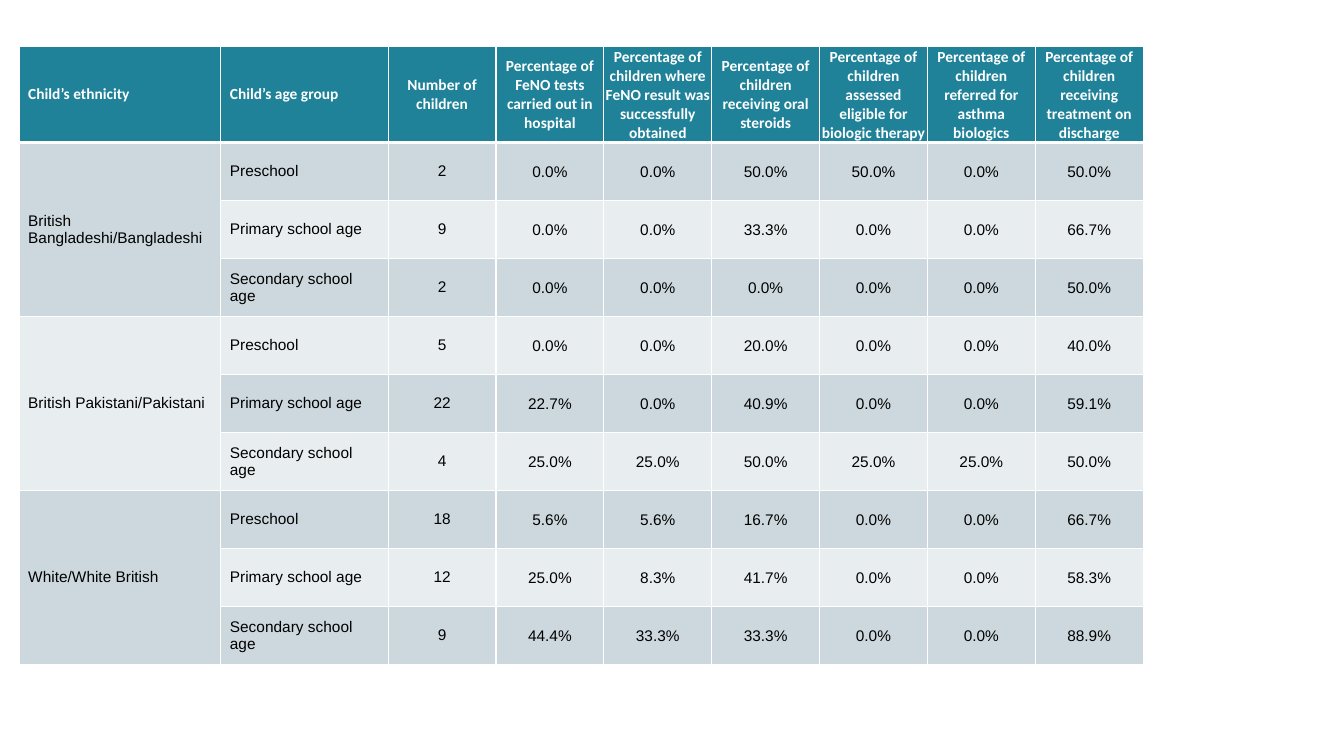
import pptx
import pptx.util
import pptx.dml.color
import pptx.enum.text
import pptx.oxml.ns
from lxml import etree

SLIDE_WIDTH, SLIDE_HEIGHT = 13.33, 7.5
COLUMN_WIDTHS = [2, 1.66] + [1.07] * 7
HEADER_HEIGHT = 0.94
HEADER_FILL, DARK_BAND, LIGHT_BAND = "1F8299", "CDD8DE", "E8EDEF"
WHITE, BLACK = "FFFFFF", "000000"

HEADINGS = [
    "Child’s ethnicity",
    "Child’s age group",
    "Number of children",
    "Percentage of FeNO tests carried out in hospital",
    "Percentage of children where FeNO result was successfully obtained",
    "Percentage of children receiving oral steroids",
    "Percentage of children assessed eligible for biologic therapy",
    "Percentage of children referred for asthma biologics",
    "Percentage of children receiving treatment on discharge",
]
AGE_GROUPS = ["Preschool", "Primary school age", "Secondary school age"]
OUTCOMES = {
    "British Bangladeshi/Bangladeshi": [
        (2, 0, 0, 50, 50, 0, 50),
        (9, 0, 0, 33.3, 0, 0, 66.7),
        (2, 0, 0, 0, 0, 0, 50),
    ],
    "British Pakistani/Pakistani": [
        (5, 0, 0, 20, 0, 0, 40),
        (22, 22.7, 0, 40.9, 0, 0, 59.1),
        (4, 25, 25, 50, 25, 25, 50),
    ],
    "White/White British": [
        (18, 5.6, 5.6, 16.7, 0, 0, 66.7),
        (12, 25, 8.3, 41.7, 0, 0, 58.3),
        (9, 44.4, 33.3, 33.3, 0, 0, 88.9),
    ],
}


def color(hex_value):
    return pptx.dml.color.RGBColor.from_string(hex_value)


def add_border(cell, side, points):
    properties = cell._tc.get_or_add_tcPr()
    line = etree.SubElement(properties, pptx.oxml.ns.qn(f"a:ln{side}"), w=str(pptx.util.Pt(points)))
    fill = etree.SubElement(line, pptx.oxml.ns.qn("a:solidFill"))
    etree.SubElement(fill, pptx.oxml.ns.qn("a:srgbClr"), val=WHITE)


def format_cell(cell, row, column):
    heading = row == 0
    rule_widths = {"L": 1, "R": 1, "T": 3 if row == 1 else 1, "B": 3 if heading else 1}
    for side, points in rule_widths.items():
        add_border(cell, side, points)
    cell.fill.solid()
    band = DARK_BAND if row % 2 else LIGHT_BAND
    cell.fill.fore_color.rgb = color(HEADER_FILL if heading else band)
    cell.vertical_anchor = pptx.enum.text.MSO_ANCHOR.MIDDLE
    percentage = column >= 3
    cell.margin_left = cell.margin_right = pptx.util.Inches(0.01 if percentage else 0.09)
    cell.margin_top = pptx.util.Inches(0.01 if percentage else 0.05)
    cell.margin_bottom = pptx.util.Inches(0 if percentage else 0.05)


def write_cell(cell, text, row, column):
    paragraph = cell.text_frame.paragraphs[0]
    if column >= 2:
        paragraph.alignment = pptx.enum.text.PP_ALIGN.CENTER
    run = paragraph.add_run()
    run.text = text
    run.font.size = pptx.util.Pt(11)
    run.font.name = "Arial" if row else "Calibri"
    run.font.bold = row == 0
    run.font.color.rgb = color(BLACK if row else WHITE)


def outcome_rows():
    rows = [HEADINGS]
    for ethnicity, groups in OUTCOMES.items():
        for index, (age_group, values) in enumerate(zip(AGE_GROUPS, groups)):
            children, *percentages = values
            rows.append([
                "" if index else ethnicity,
                age_group,
                str(children),
                *(f"{value:.1f}%" for value in percentages),
            ])
    return rows


def add_outcomes_table(slide, left, top, width, height):
    rows = outcome_rows()
    box = [pptx.util.Inches(length) for length in (left, top, width, height)]
    outcomes = slide.shapes.add_table(len(rows), len(HEADINGS), *box).table
    for column, share in zip(outcomes.columns, COLUMN_WIDTHS):
        column.width = pptx.util.Inches(width * share / sum(COLUMN_WIDTHS))
    body_height = (height - HEADER_HEIGHT) / (len(rows) - 1)
    for index, row in enumerate(outcomes.rows):
        row.height = pptx.util.Inches(body_height if index else HEADER_HEIGHT)
    for row, texts in enumerate(rows):
        for column, text in enumerate(texts):
            cell = outcomes.cell(row, column)
            format_cell(cell, row, column)
            if text:
                write_cell(cell, text, row, column)
    group_size = len(AGE_GROUPS)
    for first in range(1, len(rows), group_size):
        outcomes.cell(first, 0).merge(outcomes.cell(first + group_size - 1, 0))


def main():
    presentation = pptx.Presentation()
    presentation.slide_width = pptx.util.Inches(SLIDE_WIDTH)
    presentation.slide_height = pptx.util.Inches(SLIDE_HEIGHT)
    slide = presentation.slides.add_slide(presentation.slide_layouts[6])
    add_outcomes_table(slide, 0.19, 0.46, sum(COLUMN_WIDTHS), 6.12)
    presentation.save("out.pptx")


if __name__ == "__main__":
    main()
